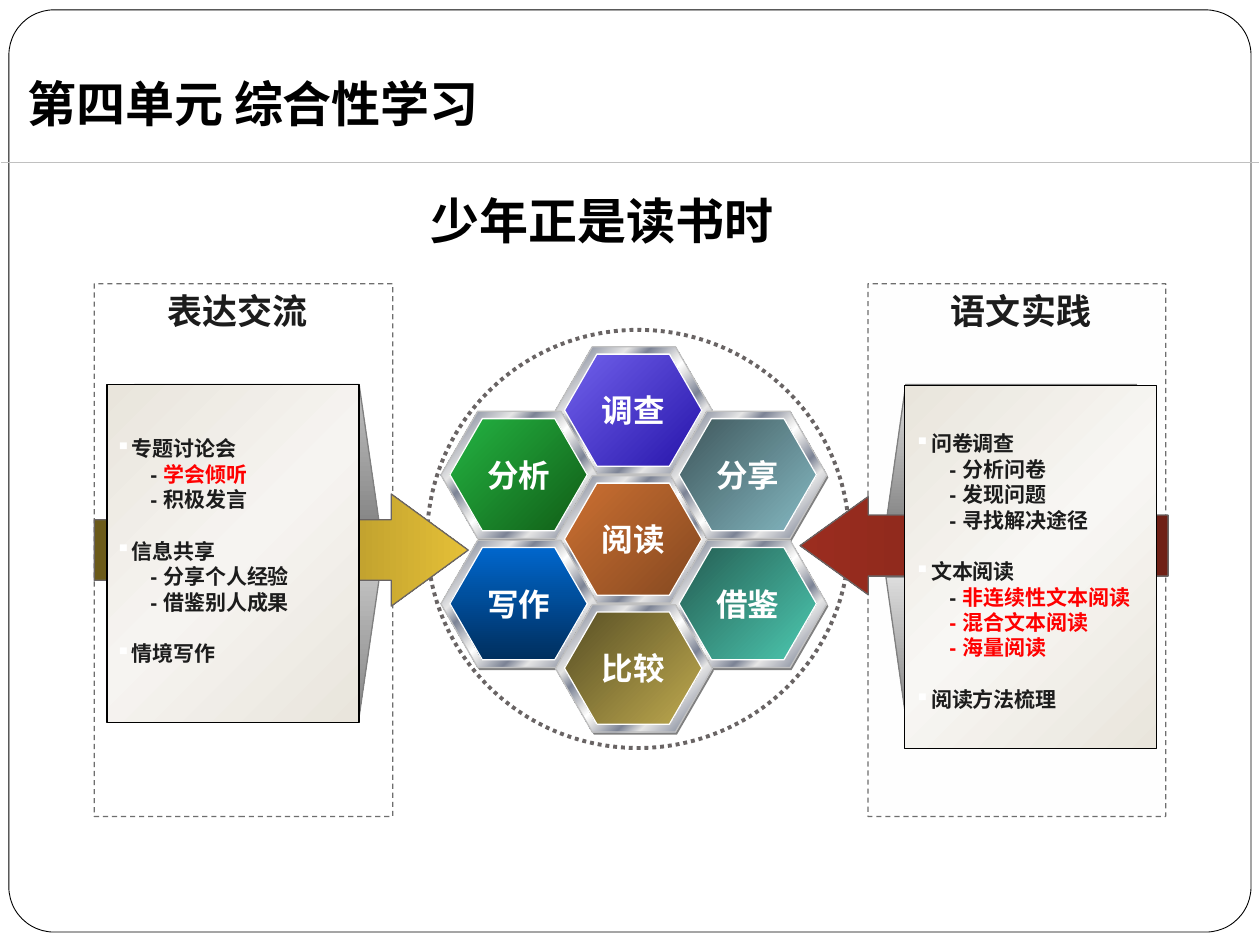
from pptx import Presentation
from pptx.dml.color import RGBColor
from pptx.enum.dml import MSO_LINE
from pptx.enum.shapes import MSO_CONNECTOR, MSO_SHAPE
from pptx.enum.text import MSO_ANCHOR, PP_ALIGN
from pptx.oxml.ns import qn
from pptx.util import Cm, Pt
from lxml import etree

RECT, ROUND = MSO_SHAPE.RECTANGLE, MSO_SHAPE.ROUNDED_RECTANGLE
OVAL, HEX, ARROW = MSO_SHAPE.OVAL, MSO_SHAPE.HEXAGON, MSO_SHAPE.RIGHT_ARROW
DOT, DASH = MSO_LINE.ROUND_DOT, MSO_LINE.DASH
LEFT, CENTER = PP_ALIGN.LEFT, PP_ALIGN.CENTER
TOP, MIDDLE, BOTTOM = MSO_ANCHOR.TOP, MSO_ANCHOR.MIDDLE, MSO_ANCHOR.BOTTOM
STRAIGHT = MSO_CONNECTOR.STRAIGHT
CJK = "Noto Sans CJK SC"
INK, RED, WHITE, BLACK = "1C1C1C", "FF0000", "FFFFFF", "000000"


def paint(shape, fill, line, width=0.75, angle=45):
    """Fill with None, one colour or a list of (percent, colour) stops."""
    shape.shadow.inherit = False
    if fill is None:
        shape.fill.background()
    elif isinstance(fill, str):
        shape.fill.solid()
        shape.fill.fore_color.rgb = RGBColor.from_string(fill)
    else:
        shape.fill.gradient()
        shape.fill.gradient_angle = 360 - angle
        stops = shape.element.spPr.find(".//" + qn("a:gsLst"))
        for old in list(stops):
            stops.remove(old)
        for spot, tone in fill:
            stop = etree.SubElement(stops, qn("a:gs"), pos=str(spot * 1000))
            etree.SubElement(stop, qn("a:srgbClr"), val=tone)
    if line is None:
        shape.line.fill.background()
    else:
        shape.line.color.rgb = RGBColor.from_string(line)
        shape.line.width = Pt(width)


def style(run, size, tone, font="Arial"):
    run.font.size = Pt(size)
    run.font.bold = True
    run.font.name = font
    run.font.color.rgb = RGBColor.from_string(tone)
    etree.SubElement(run.font._element, qn("a:ea"), typeface=CJK)


deck = Presentation()
deck.slide_width, deck.slide_height = Cm(25.4), Cm(19.05)
slide = deck.slides.add_slide(deck.slide_layouts[6])
shapes = slide.shapes

# Page frame and dotted ring
frame = shapes.add_shape(ROUND, Cm(0.18), Cm(0.2), Cm(25.04), Cm(18.59))
frame.adjustments[0] = 0.049
paint(frame, WHITE, BLACK, 0.5)
ring = shapes.add_shape(OVAL, Cm(8.61), Cm(6.65), Cm(8.51), Cm(8.43))
paint(ring, None, "696464", 2.25)
ring.line.dash_style = DOT

# Side panels: folds are (outer x, outer x, inner x, inner x)
sides = [
    dict(panel=(1.9, 5.72, 6.02, 10.74), tint=WHITE,
         fold=(2.72, 7.24, 7.65, 3.1), shade=("C0C0C0", "868686"),
         arrow=(1.9, 9.96, 7.54, 2.26), adjust=(0.54, 0.686),
         tones=("6A5919", "E5C037"), flip=False,
         card=(2.16, 7.75, 5.08, 6.81), glow="F6F4F1",
         head=(2.46, 5.72, 4.65, 1.09), title="表达交流",
         list=(2.08, 8.66, 5.1, 5.13),
         lines=["专题讨论会", "- |学会倾听", "- 积极发言",
                "信息共享", "- 分享个人经验", "- 借鉴别人成果",
                "情境写作"]),
    dict(panel=(17.5, 5.72, 6, 10.74), tint="F8F8F8",
         fold=(22.91, 18.26, 17.86, 22.5), shade=("DDDDDD", "848484"),
         arrow=(16.13, 10.01, 7.42, 1.98), adjust=(0.622, 0.694),
         tones=("6F2016", "9B2D1F"), flip=True,
         card=(18.24, 7.77, 5.08, 7.32), glow="F8F7F4",
         head=(18.26, 5.72, 4.65, 1.09), title="语文实践",
         list=(18.19, 8.56, 5.23, 6.2),
         lines=["问卷调查", "- 分析问卷", "- 发现问题", "- 寻找解决途径",
                "文本阅读", "- |非连续性文本阅读", "- 混合文本阅读", "- 海量阅读",
                "阅读方法梳理"]),
]
marked = {"学会倾听", "非连续性文本阅读", "- 混合文本阅读", "- 海量阅读"}

for side in sides:
    panel = shapes.add_shape(RECT, *map(Cm, side["panel"]))
    paint(panel, side["tint"], "5F5F5F")
    panel.line.dash_style = DASH
    for tone, alpha in zip(list(panel.element.spPr.iter(qn("a:srgbClr"))), (10, 90)):
        etree.SubElement(tone, qn("a:alpha"), val=str(alpha * 1000))

    # Folded flaps behind the card
    for outer, inner in ((7.75, 10.57), (14.45, 11.63)):
        spots = [(Cm(x), Cm(y)) for x, y in zip(side["fold"], (outer, outer, inner, inner))]
        path = shapes.build_freeform(*spots[0])
        path.add_line_segments(spots[1:], close=True)
        paint(path.convert_to_shape(), list(zip((0, 100), side["shade"])), "808080", angle=90)

    # Arrow towards the ring
    arrow = shapes.add_shape(ARROW, *map(Cm, side["arrow"]))
    arrow.adjustments[0], arrow.adjustments[1] = side["adjust"]
    paint(arrow, list(zip((0, 100), side["tones"])), "696464", angle=0)
    if side["flip"]:
        arrow.element.spPr.find(qn("a:xfrm")).set("flipH", "1")

    # Card, heading and list
    card = shapes.add_shape(RECT, *map(Cm, side["card"]))
    paint(card, [(0, "E9E5DC"), (50, side["glow"]), (100, "E9E5DC")], BLACK)

    head = shapes.add_textbox(*map(Cm, side["head"])).text_frame
    head.word_wrap = True
    head.text = side["title"]
    head.paragraphs[0].alignment = CENTER
    style(head.paragraphs[0].runs[0], 20, INK)

    body = shapes.add_textbox(*map(Cm, side["list"])).text_frame
    body.word_wrap = True
    for i, line in enumerate(side["lines"]):
        para = body.add_paragraph() if i else body.paragraphs[0]
        para.line_spacing = Pt(14.5)
        props = para._p.get_or_add_pPr()
        if line.startswith("-"):
            props.set("marL", str(Cm(0.7)))
        else:
            para.space_before = Pt(15 if i else 0)
            props.set("marL", str(Cm(0.33)))
            props.set("indent", str(-Cm(0.33)))
            tint = etree.SubElement(props, qn("a:buClr"))
            etree.SubElement(tint, qn("a:srgbClr"), val=WHITE)
            etree.SubElement(props, qn("a:buChar"), char="▪")
        for part in line.split("|"):
            run = para.add_run()
            run.text = part
            style(run, 12, RED if part in marked else INK)

# Honeycomb: label, column, half row, colours, gradient angle
cells = [
    ("调查", 0, 0, "7262EC", "2614AA", 45),
    ("分析", -1, 1, "24B443", "115D16", 45),
    ("阅读", 0, 2, "CC7032", "844820", 45),
    ("分享", 1, 1, "3E565A", "85B9C3", 45),
    ("借鉴", 1, 3, "245D52", "4DC9B1", 45),
    ("写作", -1, 3, "0066CC", "002F5E", 90),
    ("比较", 0, 4, "584F25", "BFAA4F", 45),
]
light, dark = "E6E6E6", "7D8496"
metal = [(0, light), (8, dark), (26, light), (34, dark), (46, light), (50, WHITE),
         (54, light), (66, dark), (74, light), (92, dark), (100, light)]
for label, col, row, start, end, angle in cells:
    x, y = 11.2 + 2.31 * col, 6.99 + 1.3 * row
    layers = [
        (0.03, 0.05, 3.16, 2.57, "808080", None, 45),
        (0, 0, 3.16, 2.57, metal, "C0C0C0", 45),
        (0.18, 0.15, 2.77, 2.26, [(0, start), (100, end)], WHITE, angle),
    ]
    for dx, dy, wide, high, fill, line, turn in layers:
        cell = shapes.add_shape(HEX, Cm(x + dx), Cm(y + dy), Cm(wide), Cm(high))
        cell.adjustments[0] = 0.289
        paint(cell, fill, line, angle=turn)
    text = cell.text_frame
    text.margin_left = text.margin_right = text.margin_top = text.margin_bottom = 0
    text.word_wrap = False
    text.vertical_anchor = MIDDLE
    text.text = label
    text.paragraphs[0].alignment = CENTER
    style(text.paragraphs[0].runs[0], 18, WHITE)

# Rule under the title
rule = shapes.add_connector(STRAIGHT, Cm(0.03), Cm(3.28), Cm(25.37), Cm(3.28))
rule.line.color.rgb = RGBColor.from_string("C0C0C0")
rule.line.width = Pt(0.75)
etree.SubElement(rule.element.spPr, qn("a:effectLst"))

# Title and subtitle
for words, box, anchor, foot, wrap in (
        ("第四单元 综合性学习", (0.3, 1.57, 24.79, 1.35), BOTTOM, 0.25, True),
        ("少年正是读书时", (8.43, 3.71, 7.47, 1.45), TOP, 0.13, False)):
    text = shapes.add_textbox(*map(Cm, box)).text_frame
    text.word_wrap = wrap
    text.vertical_anchor = anchor
    text.margin_bottom = Cm(foot)
    text.text = words
    text.paragraphs[0].alignment = LEFT
    style(text.paragraphs[0].runs[0], 28, BLACK, CJK)

deck.save("out.pptx")
